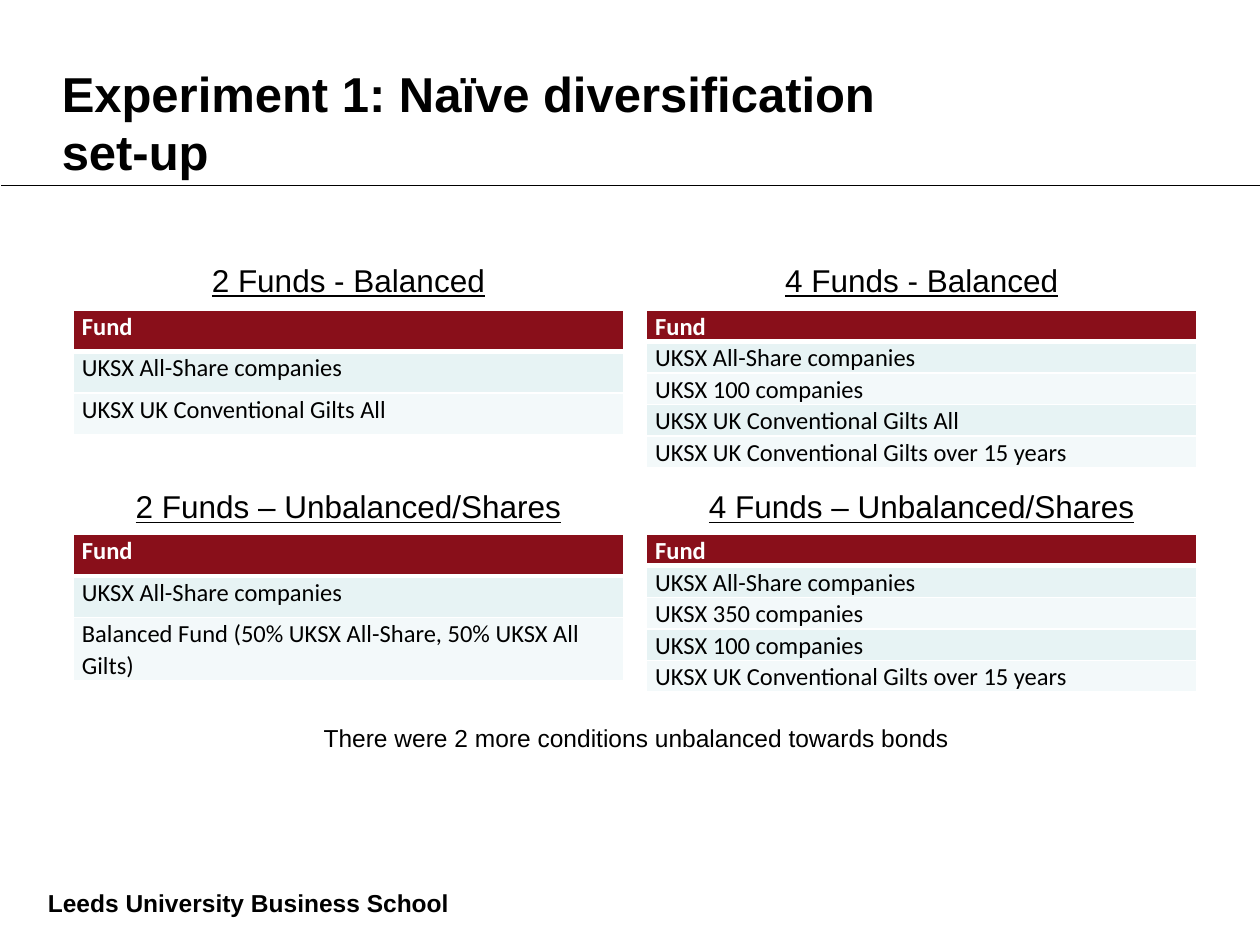
from dataclasses import dataclass

from lxml import etree
from pptx import Presentation
from pptx.dml.color import RGBColor
from pptx.enum.shapes import MSO_CONNECTOR
from pptx.enum.text import MSO_ANCHOR, MSO_AUTO_SIZE, PP_ALIGN
from pptx.oxml.ns import qn
from pptx.util import Inches, Pt

LEFT, CENTER = PP_ALIGN.LEFT, PP_ALIGN.CENTER
TOP, BOTTOM = MSO_ANCHOR.TOP, MSO_ANCHOR.BOTTOM
STRAIGHT = MSO_CONNECTOR.STRAIGHT
NO_AUTOFIT = MSO_AUTO_SIZE.NONE

BLACK, WHITE = "000000", "FFFFFF"
HEADER_FILL = "890F1A"
BAND_FILLS = ("E7F3F4", "F3F9FA")

COLUMN_LEFTS = (0.58, 5.13)
COLUMN_WIDTH = 4.37
HEADING_HEIGHT = 0.4
TOP_ROW = {"heading_top": 2.02, "table_top": 2.46}
BOTTOM_ROW = {"heading_top": 3.82, "table_top": 4.24}


@dataclass(frozen=True)
class Condition:
    heading: str
    column: int
    heading_top: float
    table_top: float
    row_height: float
    funds: tuple[str, ...]


CONDITIONS = (
    Condition("2 Funds - Balanced", 0, **TOP_ROW, row_height=0.33, funds=(
        "UKSX All-Share companies",
        "UKSX UK Conventional Gilts All",
    )),
    Condition("4 Funds - Balanced", 1, **TOP_ROW, row_height=0.25, funds=(
        "UKSX All-Share companies",
        "UKSX 100 companies",
        "UKSX UK Conventional Gilts All",
        "UKSX UK Conventional Gilts over 15 years",
    )),
    Condition("2 Funds – Unbalanced/Shares", 0, **BOTTOM_ROW, row_height=0.33, funds=(
        "UKSX All-Share companies",
        "Balanced Fund (50% UKSX All-Share, 50% UKSX All Gilts)",
    )),
    Condition("4 Funds – Unbalanced/Shares", 1, **BOTTOM_ROW, row_height=0.24, funds=(
        "UKSX All-Share companies",
        "UKSX 350 companies",
        "UKSX 100 companies",
        "UKSX UK Conventional Gilts over 15 years",
    )),
)


def rgb(color: str) -> RGBColor:
    return RGBColor.from_string(color)


def set_attributes(target, values: dict) -> None:
    for name, value in values.items():
        setattr(target, name, value)


def write_text(frame, text: str, size: float, align=LEFT, color: str = BLACK,
               font: str = "Arial", **font_format) -> None:
    frame.text = text
    paragraph = frame.paragraphs[0]
    paragraph.alignment = align
    set_attributes(paragraph.font, {"name": font, "size": Pt(size), **font_format})
    paragraph.font.color.rgb = rgb(color)


def add_text(slide, text: str, left: float, top: float, width: float, height: float,
             size: float, align=LEFT, **font_format):
    frame = slide.shapes.add_textbox(
        Inches(left), Inches(top), Inches(width), Inches(height)).text_frame
    frame.word_wrap = True
    write_text(frame, text, size, align, **font_format)
    return frame


def add_border(cell, side: str, width: float) -> None:
    line = etree.SubElement(cell._tc.get_or_add_tcPr(), qn(f"a:ln{side}"), w=str(Pt(width)))
    fill = etree.SubElement(line, qn("a:solidFill"))
    etree.SubElement(fill, qn("a:srgbClr"), val=WHITE)


def format_cell(cell, text: str, row: int) -> None:
    header = row == 0
    set_attributes(cell, {"margin_left": Inches(0.07), "margin_right": Inches(0.07),
                          "margin_top": 0, "margin_bottom": 0})
    write_text(cell.text_frame, text, 14, font="Calibri", bold=header,
               color=WHITE if header else BLACK)
    cell.text_frame.paragraphs[0].line_spacing = 1.07
    # The rule under the header is shared by the first two rows.
    widths = {"L": 1, "R": 1, "T": 3 if row == 1 else 1, "B": 3 if header else 1}
    for side, width in widths.items():
        add_border(cell, side, width)
    cell.fill.solid()
    cell.fill.fore_color.rgb = rgb(HEADER_FILL if header else BAND_FILLS[(row - 1) % 2])


def add_condition(slide, condition: Condition) -> None:
    left = COLUMN_LEFTS[condition.column]
    add_text(slide, condition.heading, left, condition.heading_top, COLUMN_WIDTH,
             HEADING_HEIGHT, 18, CENTER, underline=True)
    labels = ("Fund", *condition.funds)
    table = slide.shapes.add_table(
        len(labels), 1, Inches(left), Inches(condition.table_top), Inches(COLUMN_WIDTH),
        Inches(condition.row_height * len(labels))).table
    for row, label in enumerate(labels):
        table.rows[row].height = Inches(condition.row_height)
        format_cell(table.cell(row, 0), label, row)


def add_title(slide, text: str) -> None:
    title = slide.shapes.title
    set_attributes(title, {"left": Inches(0.39), "top": Inches(0.45),
                           "width": Inches(9.22), "height": Inches(0.71)})
    set_attributes(title.text_frame, {"vertical_anchor": TOP, "auto_size": NO_AUTOFIT,
                                      "word_wrap": True})
    write_text(title.text_frame, text, 28, bold=True)


def add_title_rule(slide) -> None:
    rule = slide.shapes.add_connector(
        STRAIGHT, Inches(0.01), Inches(1.47), Inches(10), Inches(1.47))
    rule.line.width = Pt(0.75)
    rule.line.color.rgb = rgb(BLACK)
    etree.SubElement(rule._element.spPr, qn("a:effectLst"))


def add_footer(slide) -> None:
    footer = add_text(slide, "Leeds University Business School", 0.38, 6.51, 5.33, 0.81,
                      14, bold=True)
    set_attributes(footer, {"margin_left": 0, "margin_right": 0, "margin_top": 0,
                            "margin_bottom": Inches(0.04), "vertical_anchor": BOTTOM})


def main() -> None:
    presentation = Presentation()
    set_attributes(presentation, {"slide_width": Inches(10), "slide_height": Inches(7.5)})
    slide = presentation.slides.add_slide(presentation.slide_layouts.get_by_name("Title Only"))
    add_title(slide, "Experiment 1: Naïve diversification\vset-up")
    add_title_rule(slide)
    add_footer(slide)
    for condition in CONDITIONS:
        add_condition(slide, condition)
    add_text(slide, "There were 2 more conditions unbalanced towards bonds",
             0.94, 5.69, 8.22, 0.34, 14, CENTER)
    presentation.save("out.pptx")


if __name__ == "__main__":
    main()
